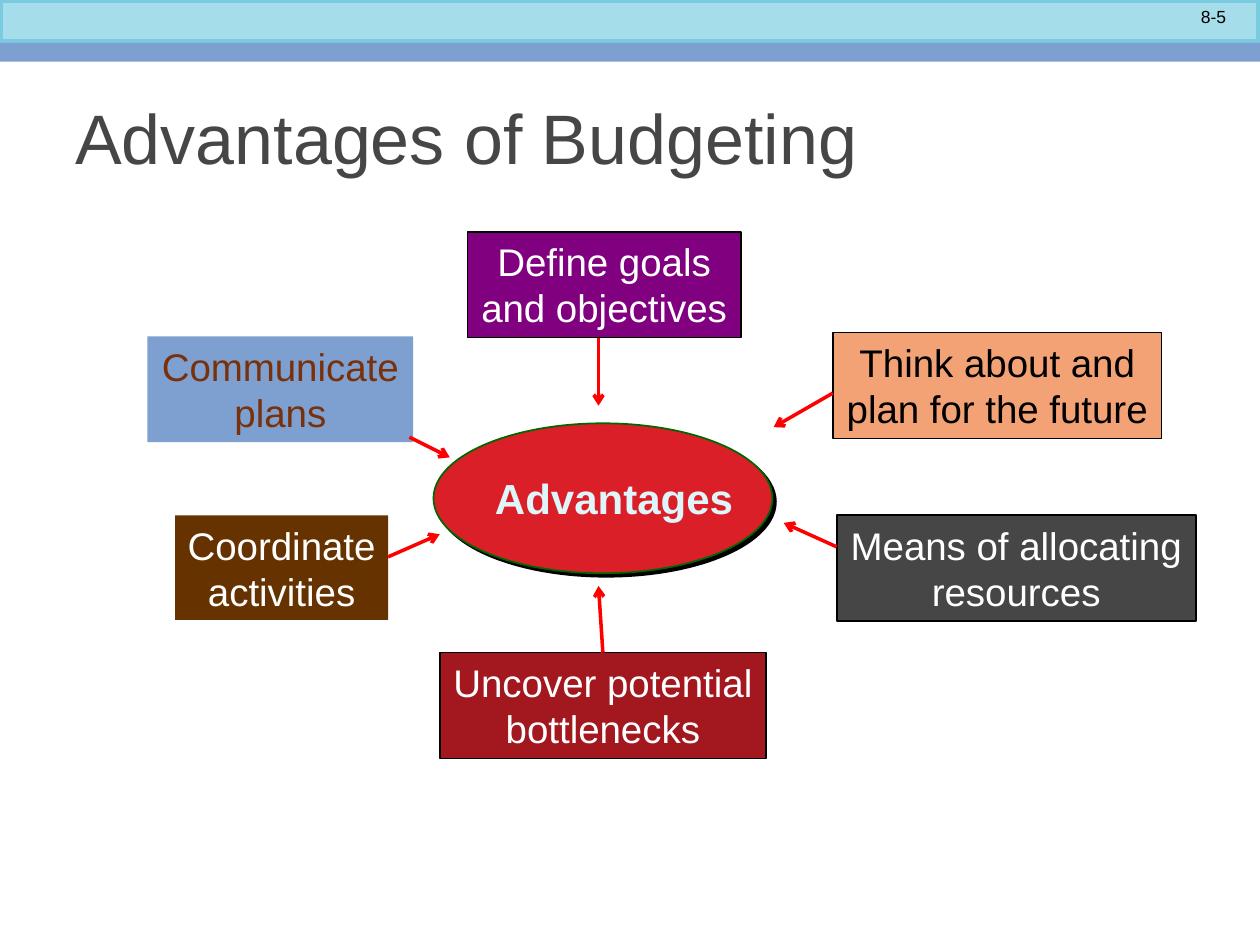
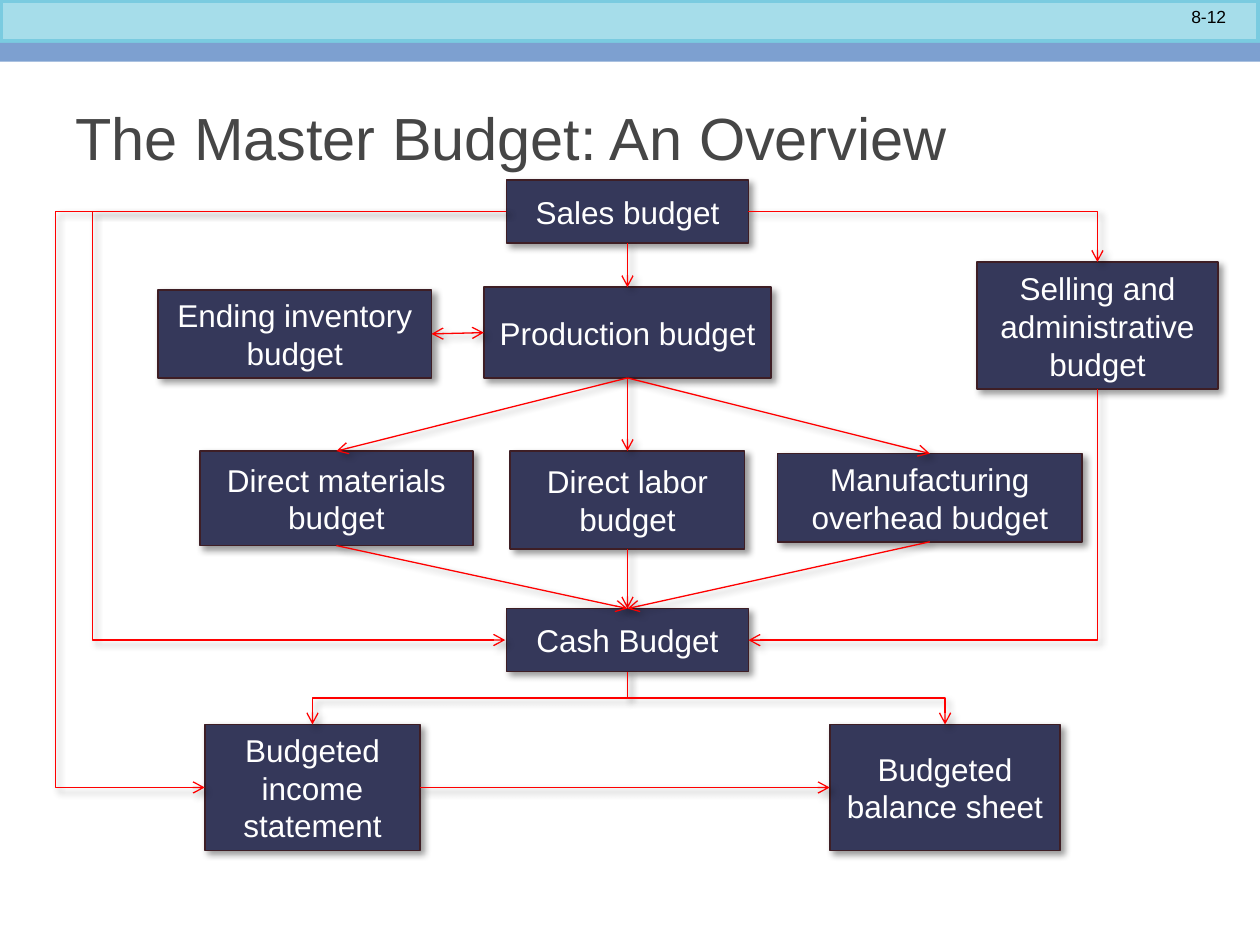
from lxml import etree
from pptx import Presentation
from pptx.dml.color import RGBColor
from pptx.enum.shapes import MSO_CONNECTOR, MSO_SHAPE
from pptx.enum.text import MSO_ANCHOR, PP_ALIGN
from pptx.oxml.ns import qn
from pptx.util import Inches, Pt

RECT, OVAL = MSO_SHAPE.RECTANGLE, MSO_SHAPE.OVAL
STRAIGHT, ELBOW = MSO_CONNECTOR.STRAIGHT, MSO_CONNECTOR.ELBOW
LEFT, CENTER, RIGHT = PP_ALIGN.LEFT, PP_ALIGN.CENTER, PP_ALIGN.RIGHT
MIDDLE, TOP = MSO_ANCHOR.MIDDLE, MSO_ANCHOR.TOP
ON_TOP, ON_LEFT, ON_BOTTOM, ON_RIGHT = range(4)  # connection sites

FONT = "Arial"
WHITE, BLACK = RGBColor(255, 255, 255), RGBColor(0, 0, 0)
AQUA, AQUA_EDGE = RGBColor(0xA6, 0xDD, 0xEA), RGBColor(0x7A, 0xCB, 0xE0)
BLUE, GRAY = RGBColor(0x7D, 0xA0, 0xD0), RGBColor(0x46, 0x46, 0x46)
RED, CRIMSON = RGBColor(255, 0, 0), RGBColor(0xDA, 0x1F, 0x28)
GREEN, ICE = RGBColor(0, 0x66, 0), RGBColor(0xDE, 0xF5, 0xFA)
PURPLE, MAROON = RGBColor(0x80, 0, 0x80), RGBColor(0xA3, 0x17, 0x1E)
BROWN, RUST = RGBColor(0x66, 0x33, 0), RGBColor(0x78, 0x31, 0x0B)
PEACH, NAVY = RGBColor(0xF3, 0xA2, 0x76), RGBColor(0x35, 0x38, 0x5A)
PLUM = RGBColor(0x3E, 0x1E, 0x25)

SLIDE_W, SLIDE_H = 10, 7.5
SOFT_SHADOW = dict(alpha=40, blur=4, dist=3)
HARD_SHADOW = dict(alpha=100, blur=0, dist=2.8)

# ---- Content: advantages ----
# lines, (left, top, width, height), fill, text colour, edge, arrow start, arrow end
# An arrow start given as a number is a connection site.
ADVANTAGES = [
    (["Define goals", "and objectives"], (3.71, 1.84, 2.17, 0.84),
     PURPLE, WHITE, BLACK, (4.75, 2.68), (4.75, 3.22)),
    (["Uncover potential", "bottlenecks"], (3.49, 5.18, 2.59, 0.84),
     MAROON, WHITE, BLACK, ON_TOP, (4.75, 4.65)),
    (["Coordinate", "activities"], (1.39, 4.09, 1.69, 0.83),
     BROWN, WHITE, None, (3.08, 4.42), (3.49, 4.24)),
    (["Communicate", "plans"], (1.17, 2.67, 2.11, 0.84),
     BLUE, RUST, None, (3.25, 3.47), (3.57, 3.63)),
    (["Think about and", "plan for the future"], (6.61, 2.64, 2.61, 0.84),
     PEACH, BLACK, BLACK, (6.61, 3.12), (6.14, 3.39)),
    (["Means of allocating", "resources"], (6.64, 4.09, 2.85, 0.84),
     GRAY, WHITE, BLACK, (6.64, 4.34), (6.22, 4.15)),
]

# ---- Content: master budget ----
AXIS = 4.98  # centre line of the middle column
# key: lines, centre x, top, width, height
BUDGETS = {
    "production": (["Production budget"], AXIS, 2.28, 2.28, 0.72),
    "selling": (["Selling and", "administrative", "budget"], 8.71, 2.08, 1.91, 1.01),
    "materials": (["Direct materials", "budget"], 2.67, 3.58, 2.17, 0.75),
    "overhead": (["Manufacturing", "overhead budget"], 7.38, 3.6, 2.42, 0.7),
    "labor": (["Direct labor", "budget"], AXIS, 3.58, 1.86, 0.78),
    "cash": (["Cash Budget"], AXIS, 4.83, 1.92, 0.5),
    "sales": (["Sales budget"], AXIS, 1.43, 1.92, 0.5),
    "inventory": (["Ending inventory", "budget"], 2.34, 2.3, 2.17, 0.7),
    "balance": (["Budgeted", "balance sheet"], 7.5, 5.75, 1.83, 1),
    "income": (["Budgeted", "income", "statement"], 2.48, 5.75, 1.71, 1),
}
# from, site, to, site
STRAIGHT_FLOWS = [
    ("inventory", ON_RIGHT, "production", ON_LEFT),
    ("income", ON_RIGHT, "balance", ON_LEFT),
    ("sales", ON_BOTTOM, "production", ON_TOP),
] + [("production", ON_BOTTOM, part, ON_TOP) for part in ("labor", "materials", "overhead")
     ] + [(part, ON_BOTTOM, "cash", ON_TOP) for part in ("labor", "materials", "overhead")]
TWO_WAY = {"inventory"}
# from, site, to, site, x of the side lane (None: no lane)
BENT_FLOWS = [
    ("sales", ON_RIGHT, "selling", ON_TOP, None),
    ("selling", ON_BOTTOM, "cash", ON_RIGHT, None),
    ("sales", ON_LEFT, "cash", ON_LEFT, 0.68),
    ("sales", ON_LEFT, "income", ON_LEFT, 0.44),
    ("cash", ON_BOTTOM, "income", ON_TOP, None),
    ("cash", ON_BOTTOM, "balance", ON_TOP, None),
]


# ---- Helpers ----
def write(shape, lines, size, color, align=CENTER, anchor=MIDDLE, bold=False, wrap=False):
    frame = shape.text_frame
    frame.word_wrap = wrap
    frame.vertical_anchor = anchor
    for i, line in enumerate(lines):
        paragraph = frame.paragraphs[0] if i == 0 else frame.add_paragraph()
        paragraph.alignment = align
        run = paragraph.add_run()
        run.text = line
        font = run.font
        font.name, font.size, font.bold = FONT, Pt(size), bold
        font.color.rgb = color


def cast_shadow(shape, alpha, blur, dist):
    props = shape._element.spPr
    effects = props.find(qn("a:effectLst"))
    if effects is None:
        effects = etree.SubElement(props, qn("a:effectLst"))
    shadow = etree.SubElement(effects, qn("a:outerShdw"), blurRad=str(Pt(blur)),
                              dist=str(Pt(dist)), dir="2700000", algn="tl", rotWithShape="0")
    color = etree.SubElement(shadow, qn("a:srgbClr"), val=str(BLACK))
    etree.SubElement(color, qn("a:alpha"), val=str(alpha * 1000))


def block(slide, area, fill, edge=None, edge_width=1, kind=RECT, shadow=None):
    shape = slide.shapes.add_shape(kind, *map(Inches, area))
    shape.shadow.inherit = False
    shape.fill.solid()
    shape.fill.fore_color.rgb = fill
    if edge is None:
        shape.line.fill.background()
    else:
        shape.line.color.rgb = edge
        shape.line.width = Pt(edge_width)
    if shadow:
        cast_shadow(shape, **shadow)
    return shape


def arrow(slide, start=(0, 0), end=(0, 0), kind=STRAIGHT, width=2, shadow=None, two_way=False):
    line = slide.shapes.add_connector(kind, *map(Inches, (*start, *end)))
    line.line.color.rgb = RED
    line.line.width = Pt(width)
    ln = line.line._get_or_add_ln()
    for tip in ["headEnd", "tailEnd"] if two_way else ["tailEnd"]:
        etree.SubElement(ln, qn("a:" + tip), type="arrow")
    if shadow:
        cast_shadow(line, **shadow)
    else:
        etree.SubElement(line._element.spPr, qn("a:effectLst"))
    return line


def bend(line, start_site, end_site, lane):
    """Shape a joined elbow: one corner, a side lane, or a drop that starts downward."""
    props = line._element.spPr
    geometry = props.find(qn("a:prstGeom"))
    if start_site % 2 != end_site % 2:
        geometry.set("prst", "bentConnector2")
    if lane is not None:
        if line.begin_x == line.end_x:
            line.end_x = line.begin_x - Inches(0.01)  # a lane needs some width to scale
        share = (line.begin_x - Inches(lane)) / line.width
        guides = geometry.get_or_add_avLst()
        etree.SubElement(guides, qn("a:gd"), name="adj1", fmla=f"val {round(share * 100000)}")
    if start_site == ON_BOTTOM:
        dx, dy = line.end_x - line.begin_x, line.end_y - line.begin_y
        mid_x, mid_y = line.begin_x + dx // 2, line.begin_y + dy // 2
        line.width, line.height = dy, abs(dx)
        line.left, line.top = mid_x - dy // 2, mid_y - abs(dx) // 2
        xfrm = props.find(qn("a:xfrm"))
        xfrm.set("rot", str((90 if dx < 0 else 270) * 60000))
        xfrm.set("flipH", "0" if dx < 0 else "1")


def new_slide(deck, title, title_size, number):
    slide = deck.slides.add_slide(deck.slide_layouts[6])
    block(slide, (0, 0, SLIDE_W, 0.34), AQUA, AQUA_EDGE, 4)
    for top, height in [(0.4, 0.09), (0.34, 0.1)]:
        block(slide, (0, top, SLIDE_W, height), BLUE)
    for text, area, size, color, align, anchor in [
        (number, (8.5, 0, 1.33, 0.27), 10, BLACK, RIGHT, TOP),
        (title, (0.5, 0.5, 9, 1.17), title_size, GRAY, LEFT, MIDDLE),
    ]:
        box = slide.shapes.add_textbox(*map(Inches, area))
        write(box, [text], size, color, align, anchor, wrap=True)
    return slide


# ---- Slides ----
def advantages_slide(deck):
    slide = new_slide(deck, "Advantages of Budgeting", 40, "8-5")
    block(slide, (3.44, 3.36, 2.69, 1.19), CRIMSON, GREEN, kind=OVAL, shadow=HARD_SHADOW)
    hub = block(slide, (3.83, 3.7, 2.11, 0.5), CRIMSON)
    write(hub, ["Advantages"], 24, ICE, LEFT, TOP, bold=True)
    for lines, area, fill, color, edge, start, end in ADVANTAGES:
        advantage = block(slide, area, fill, edge)
        write(advantage, lines, 22, color, anchor=TOP)
        if isinstance(start, tuple):
            arrow(slide, start, end)
        else:
            arrow(slide, end, end).begin_connect(advantage, start)


def master_budget_slide(deck):
    slide = new_slide(deck, "The Master Budget: An Overview", 34, "8-12")
    boxes = {}
    for key, (lines, center, top, width, height) in BUDGETS.items():
        boxes[key] = block(slide, (center - width / 2, top, width, height),
                           NAVY, PLUM, shadow=SOFT_SHADOW)
        write(boxes[key], lines, 18, WHITE)

    def join(kind, source, start_site, target, end_site):
        line = arrow(slide, kind=kind, width=0.75, shadow=SOFT_SHADOW,
                     two_way=source in TWO_WAY)
        line.begin_connect(boxes[source], start_site)
        line.end_connect(boxes[target], end_site)
        return line

    for *ends, lane in BENT_FLOWS:
        bend(join(ELBOW, *ends), ends[1], ends[3], lane)
    for ends in STRAIGHT_FLOWS:
        join(STRAIGHT, *ends)


def main():
    deck = Presentation()
    deck.slide_width, deck.slide_height = Inches(SLIDE_W), Inches(SLIDE_H)
    advantages_slide(deck)
    master_budget_slide(deck)
    deck.save("out.pptx")


if __name__ == "__main__":
    main()
